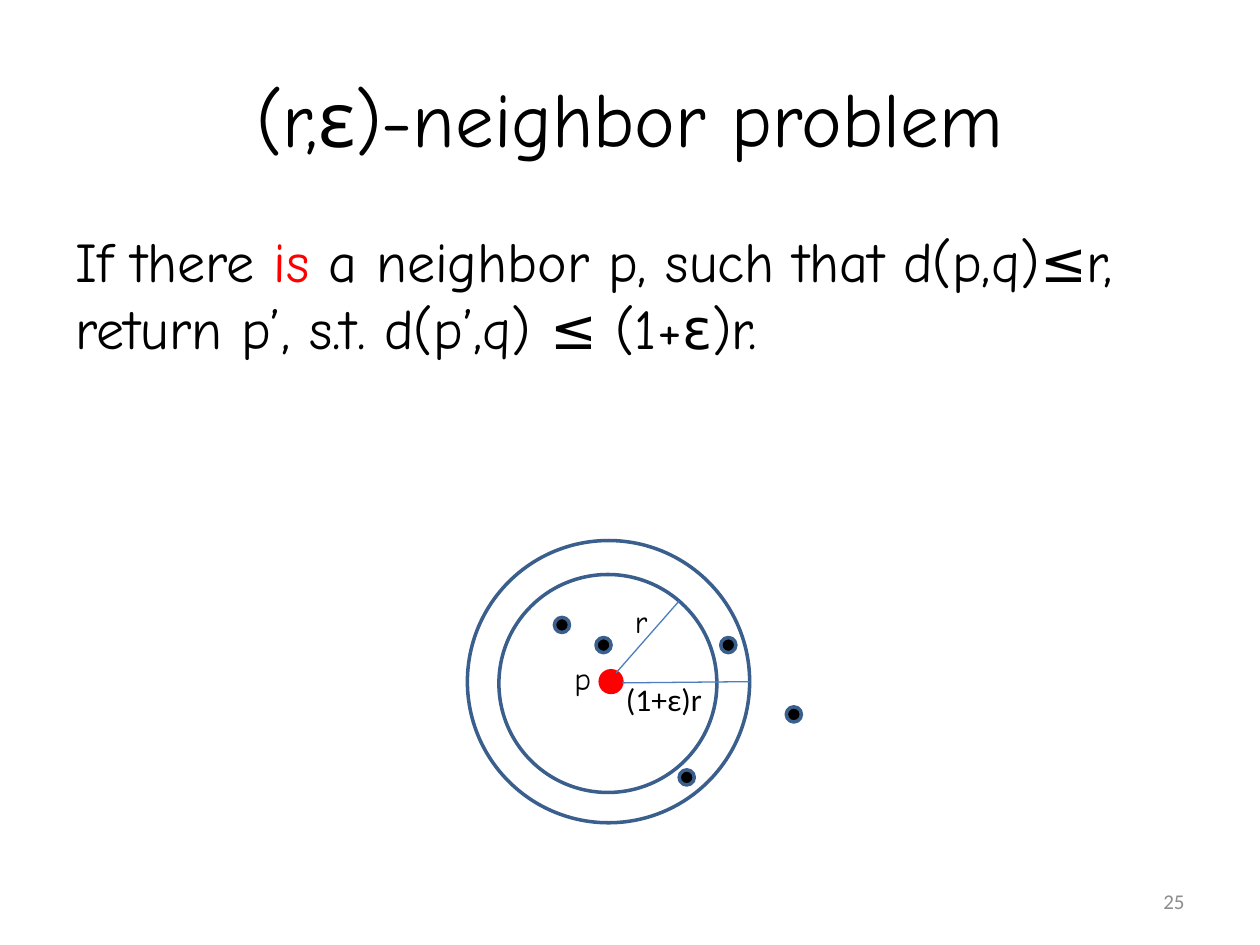
from pptx import Presentation
from pptx.dml.color import RGBColor
from pptx.enum.shapes import MSO_CONNECTOR, MSO_SHAPE
from pptx.enum.text import MSO_ANCHOR as Anchor, PP_ALIGN as Align
from pptx.oxml.ns import qn
from pptx.util import Inches, Pt
from lxml import etree

COLORS = {"black": "000000", "red": "FF0000", "outline": "3A5F8C",
          "radius": "4B7EBC", "number": "8C8C8C"}
HAND, PLAIN = "Comic Neue", "Calibri"


def rgb(name):
    return RGBColor.from_string(COLORS[name])


def add_text(box, runs, size, font=HAND, align=Align.LEFT, anchor=Anchor.TOP):
    frame = slide.shapes.add_textbox(*map(Inches, box)).text_frame
    frame.word_wrap = True
    frame.vertical_anchor = anchor
    paragraph = frame.paragraphs[0]
    paragraph.alignment = align
    paragraph.font.size = Pt(size)
    paragraph.font.name = font
    for text, color in runs:
        run = paragraph.add_run()
        run.text = text
        run.font.color.rgb = rgb(color)


prs = Presentation()
prs.slide_width, prs.slide_height = Inches(10), Inches(7.5)
slide = prs.slides.add_slide(prs.slide_layouts[6])

# Title and statement
add_text((0.5, 0.3, 9, 1.25), [("(r,ε)-neighbor problem", "black")], 44,
         align=Align.CENTER, anchor=Anchor.MIDDLE)
add_text((0.5, 1.75, 9, 4.95),
         [("If there ", "black"), ("is", "red"),
          (" a neighbor p, such that d(p,q)≤r, return p’, s.t. d(p’,q) ≤ (1+ε)r.", "black")], 32)

# Query point, the two circles and the neighboring points: left, top, diameter, fill, outline
neighbors = [(4.4, 4.9), (4.73, 5.06), (5.72, 5.06), (6.24, 5.61), (5.39, 6.11)]
circles = [(4.75, 5.31, 0.2, "red", None),
           (3.96, 4.56, 1.73, None, "outline"),
           (3.71, 4.29, 2.24, None, "outline")]
circles += [(left, top, 0.12, "black", "outline") for left, top in neighbors]
for left, top, diameter, fill, outline in circles:
    circle = slide.shapes.add_shape(MSO_SHAPE.OVAL, Inches(left), Inches(top),
                                    Inches(diameter), Inches(diameter))
    circle.shadow.inherit = False
    if fill:
        circle.fill.solid()
        circle.fill.fore_color.rgb = rgb(fill)
    else:
        circle.fill.background()
    if outline:
        circle.line.color.rgb = rgb(outline)
        circle.line.width = Pt(2)
    else:
        circle.line.fill.background()

# Radii
for ends in [(4.89, 5.34, 5.39, 4.77), (4.94, 5.42, 5.95, 5.41)]:
    radius = slide.shapes.add_connector(MSO_CONNECTOR.STRAIGHT, *map(Inches, ends))
    radius.line.color.rgb = rgb("radius")
    radius.line.width = Pt(0.75)
    etree.SubElement(radius._element.spPr, qn("a:effectLst"))

# Labels
for label, box, font in [("r", (4.94, 4.73, 0.56, 0.4), HAND),
                         ("(1+ε)r", (4.87, 5.35, 1, 0.4), PLAIN),
                         ("p", (4.46, 5.18, 0.56, 0.4), HAND)]:
    add_text(box, [(label, "black")], 18, font)

# Slide number
add_text((7.17, 6.95, 2.33, 0.4), [("25", "number")], 12, PLAIN,
         Align.RIGHT, Anchor.MIDDLE)

prs.save("out.pptx")
